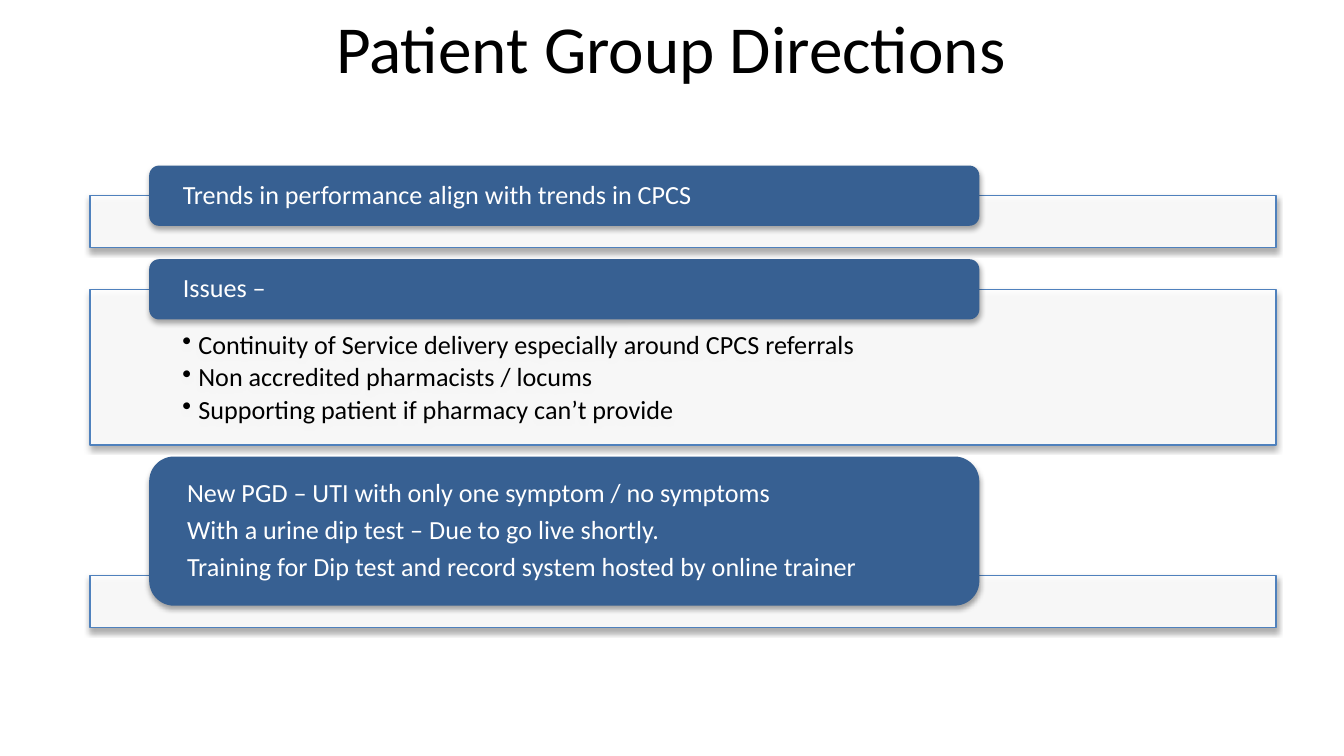
from dataclasses import dataclass

from lxml import etree
from pptx import Presentation
from pptx import util as u
from pptx.dml.color import RGBColor
from pptx.enum import shapes, text
from pptx.oxml import ns


@dataclass(frozen=True)
class Theme:
    font: str = "Calibri"
    title_size: int = 36
    body_size: int = 14
    ink: str = "000000"
    white: str = "FFFFFF"
    header: str = "376092"
    outline: str = "4F81BD"


theme = Theme()


def write_text(frame, lines, size=theme.body_size, color=theme.ink, align=text.PP_ALIGN.LEFT,
               anchor=text.MSO_ANCHOR.MIDDLE, insets=(0.25, 0.13, 0.25, 0.13),
               space_after=0, bullet=None):
    frame.word_wrap = True
    frame.auto_size = text.MSO_AUTO_SIZE.NONE
    frame.vertical_anchor = anchor
    frame.margin_left, frame.margin_top, frame.margin_right, frame.margin_bottom = map(u.Cm, insets)
    for index, line in enumerate(lines):
        paragraph = frame.add_paragraph() if index else frame.paragraphs[0]
        if bullet:
            properties = paragraph._p.get_or_add_pPr()
            properties.set("marL", str(u.Cm(0.3)))
            properties.set("indent", str(u.Cm(-0.3)))
            etree.SubElement(properties, ns.qn("a:buChar"), char=bullet)
        paragraph.text = line
        paragraph.alignment = align
        paragraph.line_spacing = 0.9
        paragraph.space_before = u.Pt(0)
        paragraph.space_after = u.Pt(space_after)
        paragraph.font.name = theme.font
        paragraph.font.size = u.Pt(size)
        paragraph.font.color.rgb = RGBColor.from_string(color)


def add_block(slide, kind, left, top, width, height, fill):
    """Add a filled shape with a soft shadow below it."""
    shape = slide.shapes.add_shape(kind, u.Cm(left), u.Cm(top), u.Cm(width), u.Cm(height))
    shape.fill.solid()
    shape.fill.fore_color.rgb = RGBColor.from_string(fill)
    shape.line.fill.background()
    shape.shadow.inherit = False
    effects = shape._element.spPr.find(ns.qn("a:effectLst"))
    shadow = etree.SubElement(effects, ns.qn("a:outerShdw"), blurRad=str(u.Pt(3.1)),
                              dist=str(u.Pt(1.8)), dir="5400000", rotWithShape="0")
    color = etree.SubElement(shadow, ns.qn("a:srgbClr"), val=theme.ink)
    etree.SubElement(color, ns.qn("a:alpha"), val="35000")
    return shape


presentation = Presentation()
presentation.slide_width = u.Cm(25.4)
presentation.slide_height = u.Cm(14.29)
slide = presentation.slides.add_slide(presentation.slide_layouts[5])

title = slide.shapes.title
title.left, title.top, title.width, title.height = map(u.Cm, (3.5, 0.13, 18.36, 1.68))
write_text(title.text_frame, ["Patient Group Directions"], size=theme.title_size,
           align=text.PP_ALIGN.CENTER)

# Header lines, header height, panel height, panel bullets
sections = [
    (["Trends in performance align with trends in CPCS"], 1.14, 0.98, []),
    (["Issues –"], 1.14, 2.94, [
        "Continuity of Service delivery especially around CPCS referrals",
        "Non accredited pharmacists / locums",
        "Supporting patient if pharmacy can’t provide",
    ]),
    ([
        "New PGD – UTI with only one symptom / no symptoms",
        "With a urine dip test – Due to go live shortly.",
        "Training for Dip test and record system hosted by online trainer",
    ], 2.82, 0.98, []),
]
overlap = 0.57
gap = 0.22
top = 3.13
for header_lines, header_height, panel_height, bullets in sections:
    panel_top = top + header_height - overlap
    panel = add_block(slide, shapes.MSO_SHAPE.RECTANGLE, 1.7, panel_top, 22.42,
                      panel_height, theme.white)
    panel_color = panel._element.spPr.find(ns.qn("a:solidFill"))[0]
    etree.SubElement(panel_color, ns.qn("a:alpha"), val="90000")
    panel.line.color.rgb = RGBColor.from_string(theme.outline)
    panel.line.width = u.Pt(0.75)
    if bullets:
        write_text(panel.text_frame, bullets, anchor=text.MSO_ANCHOR.TOP,
                   insets=(1.75, 0.81, 1.75, 0.28), space_after=2.1, bullet="•")

    header = add_block(slide, shapes.MSO_SHAPE.ROUNDED_RECTANGLE, 2.82, top, 15.69,
                       header_height, theme.header)
    write_text(header.text_frame, header_lines, color=theme.white,
               insets=(0.58, 0, 0.58, 0), space_after=4.9)
    top = panel_top + panel_height + gap

presentation.save("out.pptx")
